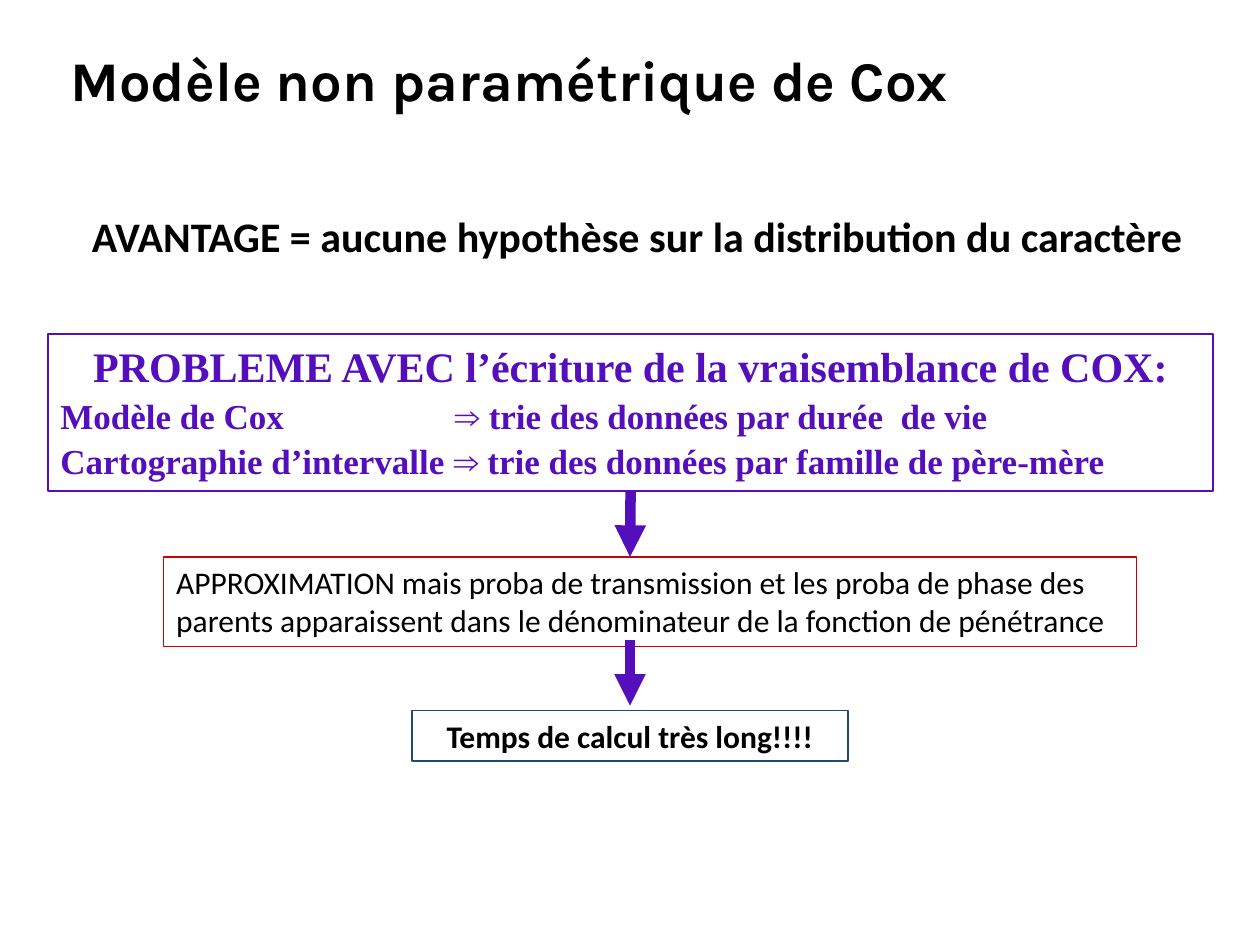
from lxml import etree
from pptx import Presentation
from pptx.dml.color import RGBColor
from pptx.enum import shapes, text
from pptx.oxml.ns import qn
from pptx.util import Inches, Pt

BLACK = RGBColor(0x00, 0x00, 0x00)
PURPLE = RGBColor(0x54, 0x0E, 0xBC)
RED = RGBColor(0xCC, 0x00, 0x00)
NAVY = RGBColor(0x1F, 0x49, 0x7D)
LEFT, CENTER = text.PP_ALIGN.LEFT, text.PP_ALIGN.CENTER

TITLE = dict(name="Karla", size=Pt(32), bold=True)
ADVANTAGE = dict(name="Calibri", size=Pt(24), bold=True)
PROBLEM_HEAD = dict(name="Times New Roman", size=Pt(24), bold=True)
PROBLEM_LINE = dict(PROBLEM_HEAD, size=Pt(20))
BODY = dict(name="Calibri", size=Pt(18), bold=False)
RESULT = dict(BODY, bold=True)


def write_para(para, words, font, color=BLACK, align=LEFT, before=0):
    para.alignment = align
    para.space_before = Pt(before)
    span = para.add_run()
    span.text = words
    for key, value in font.items():
        setattr(span.font, key, value)
    span.font.color.rgb = color


def add_tab_stop(para, position):
    tabs = etree.SubElement(para._p.get_or_add_pPr(), qn("a:tabLst"))
    etree.SubElement(tabs, qn("a:tab"), pos=str(position), algn="l")


def add_label(page, box, words, font, align=LEFT, anchor=text.MSO_ANCHOR.TOP):
    label = page.shapes.add_textbox(*map(Inches, box))
    label.text_frame.word_wrap = True
    label.text_frame.vertical_anchor = anchor
    write_para(label.text_frame.paragraphs[0], words, font, align=align)


def add_frame(page, box, color, width):
    """Add an unfilled outlined rectangle ready for text."""
    frame = page.shapes.add_shape(shapes.MSO_SHAPE.RECTANGLE, *map(Inches, box))
    frame.shadow.inherit = False
    frame.fill.background()
    frame.line.color.rgb = color
    frame.line.width = Pt(width)
    frame.text_frame.word_wrap = True
    frame.text_frame.vertical_anchor = text.MSO_ANCHOR.TOP
    return frame


def add_problem(page, box):
    frame = add_frame(page, box, PURPLE, 1)
    body = frame.text_frame
    write_para(body.paragraphs[0], "PROBLEME AVEC l’écriture de la vraisemblance de COX:",
               PROBLEM_HEAD, PURPLE, CENTER, 2.4)
    for words in ("Modèle de Cox\t⇒ trie des données par durée  de vie",
                  "Cartographie d’intervalle ⇒ trie des données par famille de père-mère"):
        para = body.add_paragraph()
        write_para(para, words, PROBLEM_LINE, PURPLE, before=2)
        if "\t" in words:
            add_tab_stop(para, Inches(3.13))
    return frame


def add_step(page, box, words, font, color, align=LEFT):
    frame = add_frame(page, box, color, 0.75)
    write_para(frame.text_frame.paragraphs[0], words, font, align=align)


def add_down_arrow(page, x, top, length):
    arrow = page.shapes.add_connector(
        shapes.MSO_CONNECTOR.STRAIGHT,
        Inches(x), Inches(top), Inches(x), Inches(top + length))
    arrow.line.color.rgb = PURPLE
    arrow.line.width = Pt(6)
    etree.SubElement(arrow.line._get_or_add_ln(), qn("a:tailEnd"), type="triangle")
    etree.SubElement(arrow._element.spPr, qn("a:effectLst"))
    return arrow


def main():
    deck = Presentation()
    deck.slide_width, deck.slide_height = Inches(10), Inches(7.5)
    page = deck.slides.add_slide(deck.slide_layouts[6])

    add_label(page, (0.46, 0, 9.08, 1.25), "Modèle non paramétrique de Cox",
              TITLE, anchor=text.MSO_ANCHOR.MIDDLE)
    add_step(page, (1.3, 4.42, 7.72, 0.71),
             "APPROXIMATION mais proba de transmission et les proba de phase des "
             "parents apparaissent dans le dénominateur de la fonction de pénétrance",
             BODY, RED)
    problem = add_problem(page, (0.38, 2.65, 9.25, 1.25))
    add_down_arrow(page, 5, 3.9, 0.52).begin_connect(problem, 2)
    add_down_arrow(page, 5, 5.08, 0.52)
    add_step(page, (3.27, 5.64, 3.46, 0.4), "Temps de calcul très long!!!!",
             RESULT, NAVY, CENTER)
    add_label(page, (0.31, 1.62, 9.57, 0.5),
              "AVANTAGE = aucune hypothèse sur la distribution du caractère ",
              ADVANTAGE, CENTER)

    deck.save("out.pptx")


if __name__ == "__main__":
    main()
